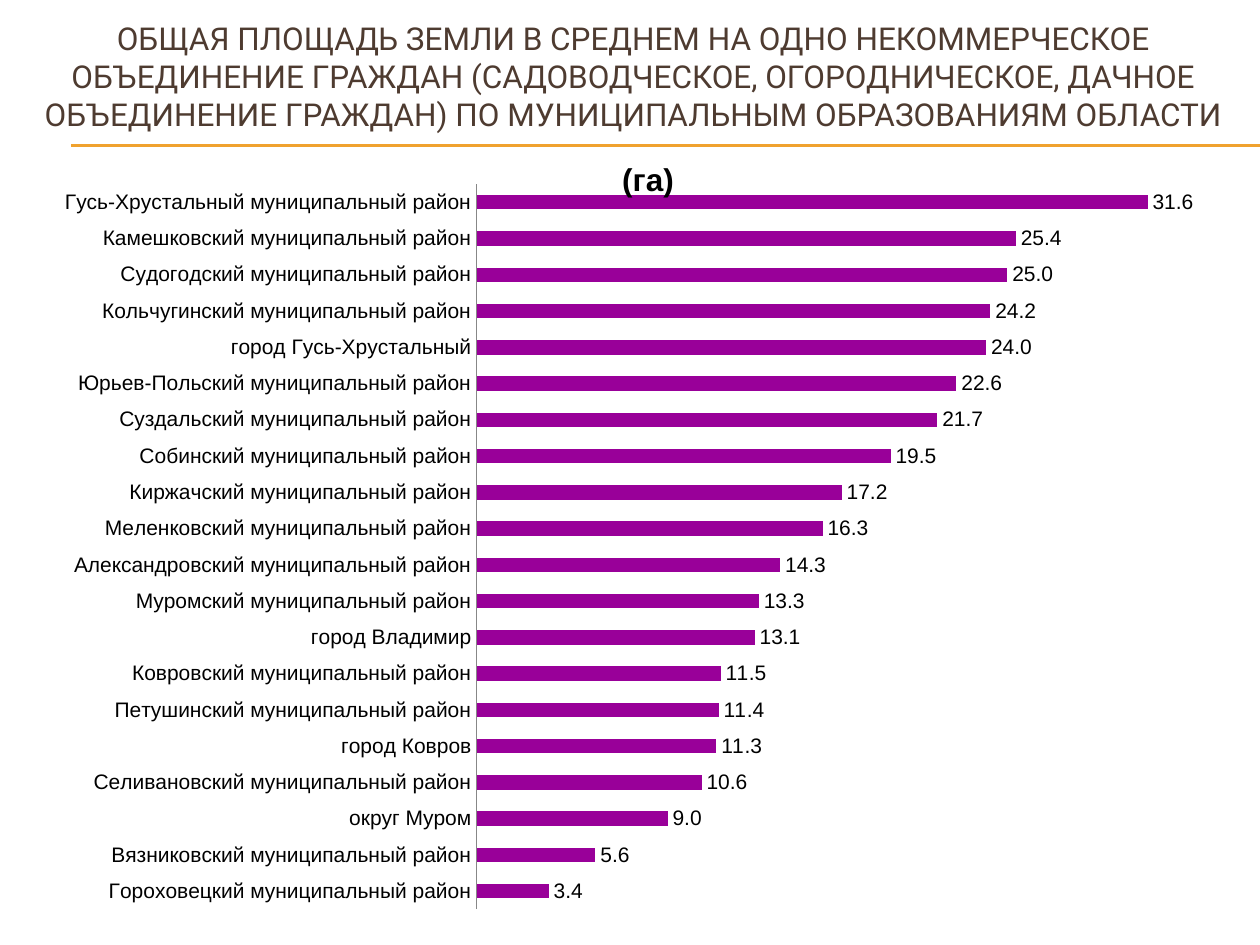
import lxml.etree
import pptx
import pptx.chart.data
import pptx.dml.color
import pptx.enum.chart
import pptx.enum.shapes
import pptx.enum.text
import pptx.oxml.ns
import pptx.util

EMU_PER_PX = 914400 / 126
HEADING = (
    "ОБЩАЯ ПЛОЩАДЬ ЗЕМЛИ В СРЕДНЕМ НА ОДНО НЕКОММЕРЧЕСКОЕ ОБЪЕДИНЕНИЕ ГРАЖДАН "
    "(САДОВОДЧЕСКОЕ, ОГОРОДНИЧЕСКОЕ, ДАЧНОЕ ОБЪЕДИНЕНИЕ ГРАЖДАН) "
    "ПО МУНИЦИПАЛЬНЫМ ОБРАЗОВАНИЯМ ОБЛАСТИ"
)
DISTRICT = " муниципальный район"
LAND_AREAS = {
    "Гороховецкий" + DISTRICT: 3.4,
    "Вязниковский" + DISTRICT: 5.6,
    "округ Муром": 9.0,
    "Селивановский" + DISTRICT: 10.6,
    "город Ковров": 11.3,
    "Петушинский" + DISTRICT: 11.4,
    "Ковровский" + DISTRICT: 11.5,
    "город Владимир": 13.1,
    "Муромский" + DISTRICT: 13.3,
    "Александровский" + DISTRICT: 14.3,
    "Меленковский" + DISTRICT: 16.3,
    "Киржачский" + DISTRICT: 17.2,
    "Собинский" + DISTRICT: 19.5,
    "Суздальский" + DISTRICT: 21.7,
    "Юрьев-Польский" + DISTRICT: 22.6,
    "город Гусь-Хрустальный": 24.0,
    "Кольчугинский" + DISTRICT: 24.2,
    "Судогодский" + DISTRICT: 25.0,
    "Камешковский" + DISTRICT: 25.4,
    "Гусь-Хрустальный" + DISTRICT: 31.6,
}


def px(length):
    return pptx.util.Emu(round(length * EMU_PER_PX))


def color(value):
    return pptx.dml.color.RGBColor.from_string(value)


def apply(target, values):
    for name, value in values.items():
        setattr(target, name, value)


def place(parent, before, **fractions):
    layout = parent.find(pptx.oxml.ns.qn("c:layout"))
    if layout is None:
        layout = lxml.etree.Element(pptx.oxml.ns.qn("c:layout"))
        before.addprevious(layout)
    manual = lxml.etree.SubElement(layout, pptx.oxml.ns.qn("c:manualLayout"))
    settings = {"xMode": "edge", "yMode": "edge", **fractions}
    if "w" in fractions:
        settings = {"layoutTarget": "inner", **settings}
    for name, value in settings.items():
        lxml.etree.SubElement(manual, pptx.oxml.ns.qn("c:" + name), val=str(value))


class LandReport:
    """Draws the styled parts of the land area report on its current slide."""

    heading_font, label_font = "Roboto", "Arial"
    brown, gold, purple, gray, black = "4E3B30", "F0A22E", "990099", "878787", "000000"

    def __init__(self, deck):
        self.slide = deck.slides.add_slide(deck.slide_layouts[6])

    def style(self, font, name, size, hue, **extras):
        apply(font, {"name": name, "size": pptx.util.Pt(size), **extras})
        font.color.rgb = color(hue)

    def rule(self, left, right, y):
        line = self.slide.shapes.add_connector(
            pptx.enum.shapes.MSO_CONNECTOR.STRAIGHT, px(left), px(y), px(right), px(y))
        line.line.color.rgb = color(self.gold)
        line.line.width = pptx.util.Pt(0.75)
        lxml.etree.SubElement(line._element.spPr, pptx.oxml.ns.qn("a:effectLst"))

    def heading(self, text, left, top, width, height):
        frame = self.slide.shapes.add_textbox(px(left), px(top), px(width), px(height)).text_frame
        apply(frame, {"word_wrap": True, "vertical_anchor": pptx.enum.text.MSO_ANCHOR.MIDDLE})
        paragraph = frame.paragraphs[0]
        apply(paragraph, {"text": text, "alignment": pptx.enum.text.PP_ALIGN.CENTER})
        self.style(paragraph.runs[0].font, self.heading_font, 18, self.brown)

    def bar_chart(self, unit, areas, left, top, width, height):
        data = pptx.chart.data.CategoryChartData(number_format="0.0")
        data.categories = list(areas)
        data.add_series("Series 1", list(areas.values()))
        chart = self.slide.shapes.add_chart(
            pptx.enum.chart.XL_CHART_TYPE.BAR_CLUSTERED,
            px(left), px(top), px(width), px(height), data).chart
        apply(chart, {"has_legend": False, "has_title": True})
        self.style(chart.font, self.heading_font, 10, self.black)
        self.chart_title(chart, unit)
        self.axes(chart)
        self.bars(chart.plots[0])
        area = chart._chartSpace.chart.plotArea
        place(area, area[0], x=0.363, y=0.05, w=0.621, h=0.925)

    def chart_title(self, chart, unit):
        title = chart.chart_title
        title.text_frame.text = unit
        run = title.text_frame.paragraphs[0].runs[0]
        self.style(run.font, self.label_font, 18, self.black, bold=True)
        overlay = title._element.find(pptx.oxml.ns.qn("c:overlay"))
        place(title._element, overlay, x=0.48, y=0.01)

    def axes(self, chart):
        no_tick = pptx.enum.chart.XL_TICK_MARK.NONE
        shared = {"major_tick_mark": no_tick, "minor_tick_mark": no_tick,
                  "has_major_gridlines": False}
        apply(chart.category_axis, shared)
        apply(chart.value_axis, {**shared, "visible": False,
                                 "minimum_scale": 0, "maximum_scale": 35})
        self.style(chart.category_axis.tick_labels.font, self.label_font, 12, self.black)
        axis_line = chart.category_axis.format.line
        axis_line.color.rgb = color(self.gray)
        axis_line.width = pptx.util.Pt(0.75)

    def bars(self, plot):
        apply(plot, {"gap_width": 150, "overlap": -25,
                     "vary_by_categories": False, "has_data_labels": True})
        series = plot.series[0]
        series.invert_if_negative = False
        series.format.fill.solid()
        series.format.fill.fore_color.rgb = color(self.purple)
        apply(plot.data_labels, {
            "show_value": True, "number_format": "0.0", "number_format_is_linked": False,
            "position": pptx.enum.chart.XL_LABEL_POSITION.OUTSIDE_END})
        self.style(plot.data_labels.font, self.label_font, 12, self.black)


def main():
    deck = pptx.Presentation()
    apply(deck, {"slide_width": px(1260), "slide_height": px(945)})
    report = LandReport(deck)
    for y in (145, 146):
        report.rule(71, 1260, y)
    report.heading(HEADING, 25, 17, 1217, 118)
    report.bar_chart("(га)", LAND_AREAS, 42, 145, 1197, 784)
    deck.save("out.pptx")


if __name__ == "__main__":
    main()
